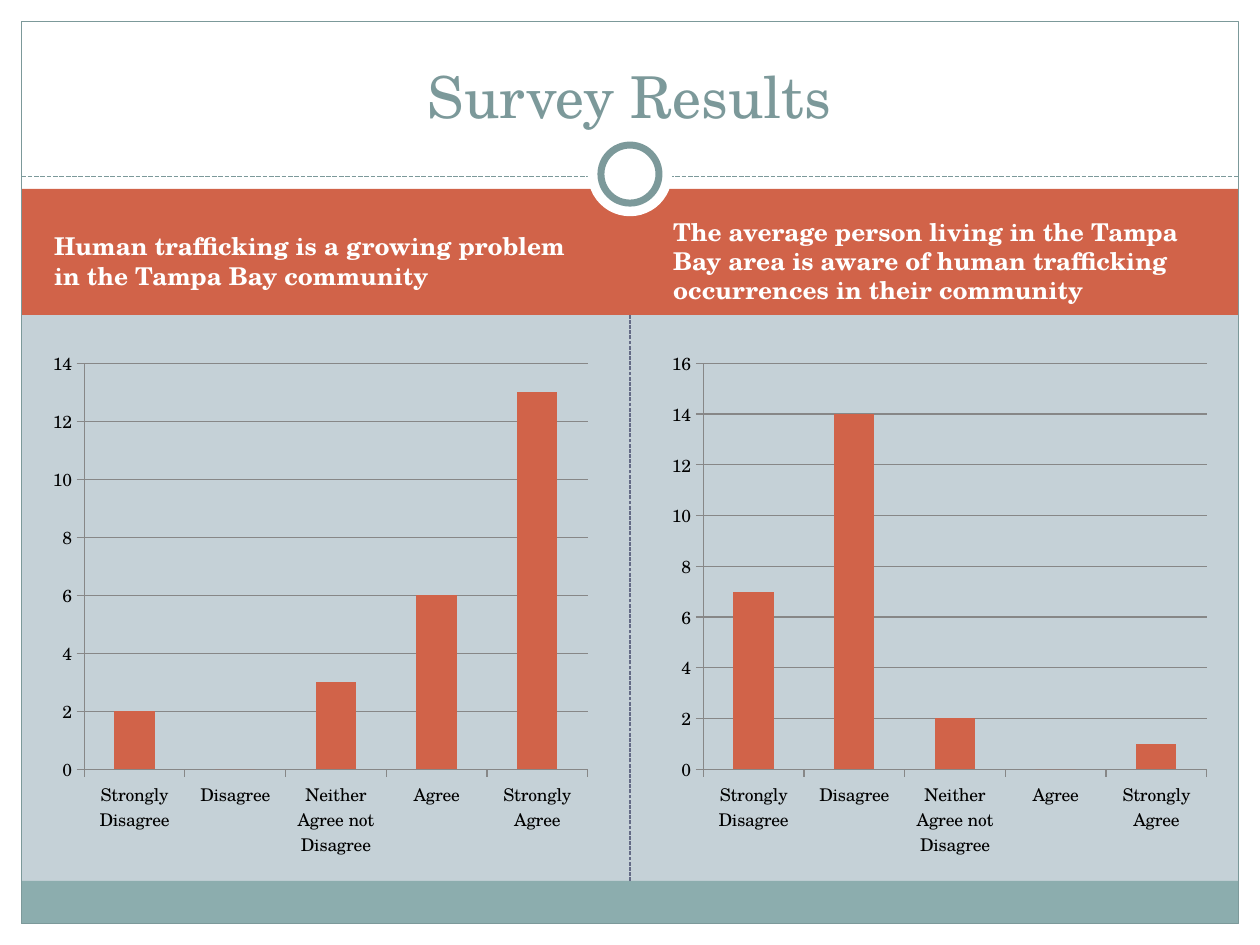
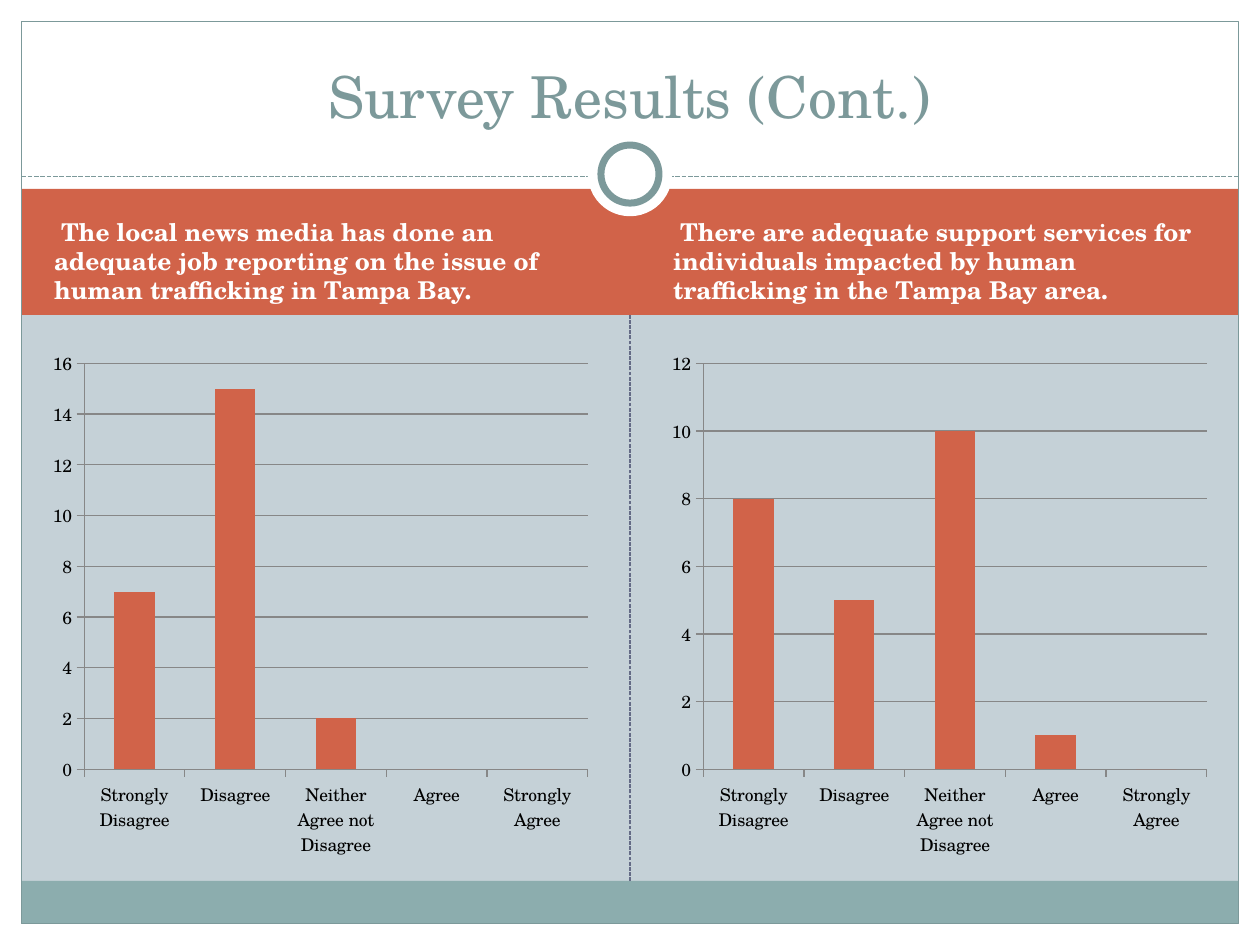
from pptx import Presentation
from pptx.chart.data import CategoryChartData
from pptx.dml.color import RGBColor
from pptx.enum.chart import XL_CHART_TYPE as CHART, XL_TICK_MARK as TICK
from pptx.enum.dml import MSO_LINE as DASH
from pptx.enum.shapes import MSO_CONNECTOR as CONN, MSO_SHAPE as SHAPE
from pptx.enum.text import MSO_ANCHOR as ANCHOR, MSO_AUTO_SIZE as AUTO, PP_ALIGN as ALIGN
from pptx.oxml.ns import qn
from pptx.util import Cm, Pt
from lxml import etree

WIDTH, HEIGHT = 25.4, 19.05
MARGIN = 0.43
INNER_W = WIDTH - 2 * MARGIN
MID_X = WIDTH / 2
COLUMN_W = 11.23
COLUMNS = (0.84, 13.32)

CATEGORIES = ["Strongly Disagree", "Disagree", "Neither Agree not Disagree",
              "Agree", "Strongly Agree"]
SURVEY = [
    ("Survey Results", [
        ("Human trafficking is a growing problem in the Tampa Bay community",
         (2, 0, 3, 6, 13)),
        ("The average person living in the Tampa Bay area is aware of human "
         "trafficking occurrences in their community", (7, 14, 2, 0, 1)),
    ]),
    ("Survey Results (Cont.)", [
        (" The local news media has done an adequate job reporting on the issue "
         "of human trafficking in Tampa Bay.", (7, 15, 2, 0, 0)),
        (" There are adequate support services for individuals impacted by human "
         "trafficking in the Tampa Bay area.", (8, 5, 10, 1, 0)),
    ]),
]


def rgb(color):
    return RGBColor.from_string(color)


def cm(*lengths):
    return [Cm(n) for n in lengths]


class Deck:
    FONT = "TeX Gyre Schola"
    WHITE, BLACK = "FFFFFF", "000000"
    BACK, ORANGE, TEAL = "C5D1D7", "D16349", "8CADAE"
    GREEN, PURPLE, GRID = "7C999A", "646B86", "878787"

    def __init__(self):
        self.prs = Presentation()
        self.prs.slide_width, self.prs.slide_height = cm(WIDTH, HEIGHT)
        self.s = None

    def style(self, font, size, color, bold=False):
        font.name, font.size, font.bold = self.FONT, Pt(size), bold
        font.color.rgb = rgb(color)

    def shape(self, kind, box, fill=None, line=None, width=0.75):
        sp = self.s.shapes.add_shape(kind, *cm(*box))
        sp.shadow.inherit = False
        if fill:
            sp.fill.solid()
            sp.fill.fore_color.rgb = rgb(fill)
        else:
            sp.fill.background()
        if line:
            sp.line.color.rgb = rgb(line)
            sp.line.width = Pt(width)
        else:
            sp.line.fill.background()
        return sp

    def rect(self, *box, **look):
        return self.shape(SHAPE.RECTANGLE, box, **look)

    def circle(self, cx, cy, d, **look):
        return self.shape(SHAPE.OVAL, (cx - d / 2, cy - d / 2, d, d), **look)

    def dashes(self, x1, y1, x2, y2, color, width):
        c = self.s.shapes.add_connector(CONN.STRAIGHT, *cm(x1, y1, x2, y2))
        c.line.color.rgb = rgb(color)
        c.line.width = Pt(width)
        c.line.dash_style = DASH.SQUARE_DOT
        etree.SubElement(c.element.spPr, qn("a:effectLst"))
        return c

    def put_text(self, sp, text, size, color, anchor, align, bold=False):
        tf = sp.text_frame
        tf.text = text
        tf.word_wrap, tf.auto_size = True, AUTO.NONE
        tf.vertical_anchor = anchor
        p = tf.paragraphs[0]
        p.alignment = align
        self.style(p.runs[0].font, size, color, bold)
        return p

    def title(self, text):
        sp = self.s.shapes.title
        sp.left, sp.top, sp.width, sp.height = cm(0.84, 0.64, 23.7, 2.11)
        self.put_text(sp, text, 33, self.GREEN, ANCHOR.BOTTOM, ALIGN.CENTER)
        self.s.shapes.element.append(sp.element)

    def heading(self, x, text):
        sp = self.s.shapes.add_textbox(*cm(x, 4.24, COLUMN_W, 2.03))
        p = self.put_text(sp, text, 14, self.WHITE, ANCHOR.MIDDLE, ALIGN.LEFT, True)
        p.space_before = Pt(2.8)

    def chart(self, x, values):
        data = CategoryChartData()
        data.categories = CATEGORIES
        data.add_series("Series 1", values)
        chart = self.s.shapes.add_chart(
            CHART.COLUMN_CLUSTERED, *cm(x, 6.86, COLUMN_W, 10.62), data).chart
        chart.has_legend = chart.has_title = False
        self.style(chart.font, 10, self.BLACK)
        plot = chart.plots[0]
        plot.gap_width, plot.vary_by_categories = 150, False
        bars = plot.series[0].format.fill
        bars.solid()
        bars.fore_color.rgb = rgb(self.ORANGE)
        value_axis = chart.value_axis
        value_axis.minimum_scale, value_axis.major_unit = 0, 2
        value_axis.maximum_scale = (max(values) // 2 + 1) * 2
        value_axis.has_major_gridlines = True
        for axis in (chart.category_axis, value_axis):
            axis.major_tick_mark, axis.minor_tick_mark = TICK.OUTSIDE, TICK.NONE
        for part in (chart.category_axis, value_axis, value_axis.major_gridlines):
            part.format.line.color.rgb = rgb(self.GRID)
            part.format.line.width = Pt(0.75)

    def frame(self):
        fill = self.s.background.fill
        fill.solid()
        fill.fore_color.rgb = rgb(self.BACK)
        for box in ((0, 0, WIDTH, 4.01), (0, HEIGHT - MARGIN, WIDTH, MARGIN),
                    (0, 0, MARGIN, HEIGHT), (WIDTH - MARGIN, 0, MARGIN, HEIGHT)):
            self.rect(*box, fill=self.WHITE)
        band = self.rect(MARGIN, 3.81, INNER_W, 2.54, fill=self.ORANGE)
        footer = self.rect(MARGIN, 17.76, INNER_W, 0.86, fill=self.TEAL)
        divider = self.dashes(MID_X, 17.76, MID_X, 6.35, self.PURPLE, 0.75)
        divider.begin_connect(footer, 0)
        divider.end_connect(band, 2)
        self.dashes(MARGIN, 3.56, WIDTH - MARGIN, 3.56, self.GREEN, 0.9)
        self.rect(MARGIN, MARGIN, INNER_W, HEIGHT - 2 * MARGIN, line=self.GREEN)
        self.circle(MID_X, 3.51, 1.7, fill=self.WHITE)
        self.circle(MID_X, 3.51, 1.17, fill=self.WHITE, line=self.GREEN, width=4)

    def slide(self, title, questions):
        self.s = self.prs.slides.add_slide(self.prs.slide_layouts[5])
        self.frame()
        for x, (question, _) in zip(COLUMNS, questions):
            self.heading(x, question)
        self.title(title)
        for x, (_, answers) in zip(COLUMNS, questions):
            self.chart(x, answers)


def main():
    deck = Deck()
    for title, questions in SURVEY:
        deck.slide(title, questions)
    deck.prs.save("out.pptx")


if __name__ == "__main__":
    main()
